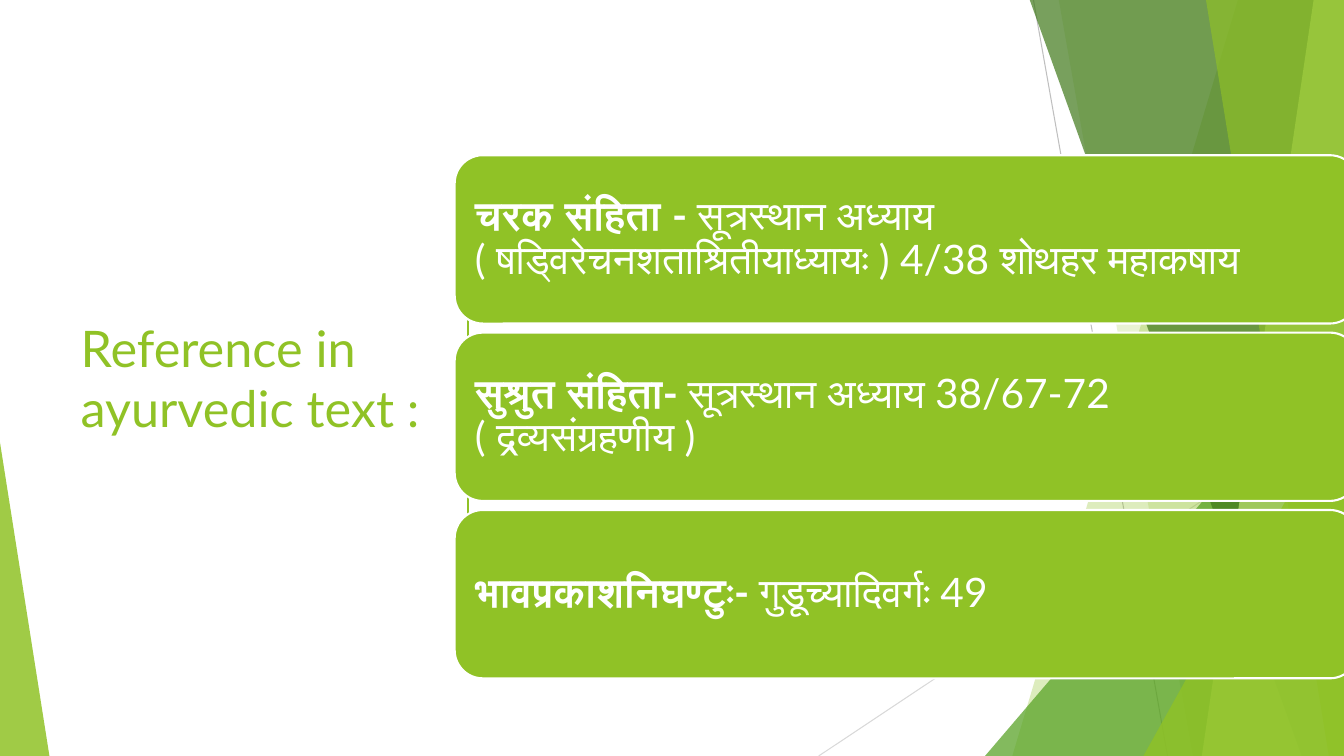
"""Build a slide listing the references in ayurvedic texts."""
from lxml import etree
from pptx import Presentation
from pptx.dml.color import RGBColor
from pptx.enum import shapes, text
from pptx.oxml.ns import qn
from pptx.util import Inches, Pt

GREEN = RGBColor(0x90, 0xC2, 0x26)
MID_GREEN = RGBColor(0x54, 0xA0, 0x21)
DARK_GREEN = RGBColor(0x3F, 0x78, 0x19)
PALE_GREEN = RGBColor(0xC0, 0xE4, 0x74)
GRAY = RGBColor(0xBF, 0xBF, 0xBF)
LIGHT_GRAY = RGBColor(0xD9, 0xD9, 0xD9)
WHITE = RGBColor(0xFF, 0xFF, 0xFF)
FONT = "Lato"
RIGHT, TOP, BOTTOM = 13.33, -0.01, 7.5

presentation = Presentation()
presentation.slide_width = Inches(RIGHT)
presentation.slide_height = Inches(BOTTOM)
slide = presentation.slides.add_slide(presentation.slide_layouts[5])


def add_line(start, end, color, width):
    line = slide.shapes.add_connector(
        shapes.MSO_CONNECTOR.STRAIGHT, *map(Inches, start + end))
    line.line.color.rgb = color
    line.line.width = Pt(width)
    etree.SubElement(line._element.spPr, qn("a:effectLst"))


def fill_facet(shape, color, opacity):
    shape.shadow.inherit = False
    shape.line.fill.background()
    shape.fill.solid()
    shape.fill.fore_color.rgb = color
    color_element = shape._element.spPr.find(qn("a:solidFill"))[0]
    etree.SubElement(color_element, qn("a:alpha"), val=str(opacity * 1000))


add_line((10.25, 0), (11.58, 7.5), GRAY, 0.75)
add_line((13.33, 4.03), (8.12, 7.5), LIGHT_GRAY, 0.75)

bands = [
    (12.28, 10.04, GREEN, 30),
    (10.5, 11.83, GREEN, 20),
    (10.21, 12.91, DARK_GREEN, 70),
    (13.03, 11.92, PALE_GREEN, 70),
    (11.96, 13.18, GREEN, 65),
]
triangles = [
    (9.77, 3.33, 3.56, 4.17, 1, MID_GREEN, 72),
    (11.34, 3.93, 1.99, 3.57, 1, GREEN, 80),
    (0, 4.39, 0.49, 3.11, 0, GREEN, 85),
]
facets = bands[:2] + triangles[:1] + bands[2:] + triangles[1:]
for *geometry, color, opacity in facets:
    if len(geometry) == 2:
        top_x, bottom_x = geometry
        corners = [(RIGHT, TOP), (RIGHT, BOTTOM), (bottom_x, BOTTOM)]
        builder = slide.shapes.build_freeform(Inches(top_x), Inches(TOP))
        builder.add_line_segments([(Inches(x), Inches(y)) for x, y in corners])
        facet = builder.convert_to_shape()
    else:
        *box, apex = geometry
        facet = slide.shapes.add_shape(
            shapes.MSO_SHAPE.ISOSCELES_TRIANGLE, *map(Inches, box))
        facet.adjustments[0] = apex
    fill_facet(facet, color, opacity)

add_line((4.64, 1.6), (4.64, 5.9), GREEN, 1)

title = slide.shapes.title
title.left, title.top, title.width, title.height = map(
    Inches, (0.7, 0.89, 3.68, 5.71))
title.text_frame.text = "Reference in ayurvedic text :"
title.text_frame.word_wrap = True
title.text_frame.auto_size = text.MSO_AUTO_SIZE.NONE
title.text_frame.vertical_anchor = text.MSO_ANCHOR.MIDDLE
paragraph = title.text_frame.paragraphs[0]
paragraph.alignment = text.PP_ALIGN.LEFT
paragraph.font.name = FONT
paragraph.font.size = Pt(36)
paragraph.font.color.rgb = GREEN

references = [
    ("चरक संहिता - ",
     "सूत्रस्थान अध्याय ( षड्विरेचनशताश्रितीयाध्यायः ) 4/38 शोथहर महाकषाय"),
    ("सुश्रुत संहिता- ", "सूत्रस्थान अध्याय 38/67-72 ( द्रव्यसंग्रहणीय )"),
    ("भावप्रकाशनिघण्टुः- ", "गुडूच्यादिवर्गः 49"),
]
for index, (source, chapter) in enumerate(references):
    bar = slide.shapes.add_shape(
        shapes.MSO_SHAPE.ROUNDED_RECTANGLE, Inches(4.51),
        Inches(1.54 + 1.76 * index), Inches(8.96), Inches(1.67))
    bar.shadow.inherit = False
    bar.fill.solid()
    bar.fill.fore_color.rgb = GREEN
    bar.line.color.rgb = WHITE
    bar.line.width = Pt(1.5)
    frame = bar.text_frame
    frame.word_wrap = True
    frame.vertical_anchor = text.MSO_ANCHOR.MIDDLE
    frame.margin_left = frame.margin_right = Inches(0.12)
    frame.margin_top = frame.margin_bottom = Inches(0.12)
    paragraph = frame.paragraphs[0]
    paragraph.alignment = text.PP_ALIGN.LEFT
    paragraph.line_spacing = 0.9
    paragraph.font.name = FONT
    paragraph.font.size = Pt(29)
    paragraph.font.color.rgb = WHITE
    for words, bold in ((source, True), (chapter, False)):
        run = paragraph.add_run()
        run.text = words
        run.font.bold = bold

presentation.save("out.pptx")
